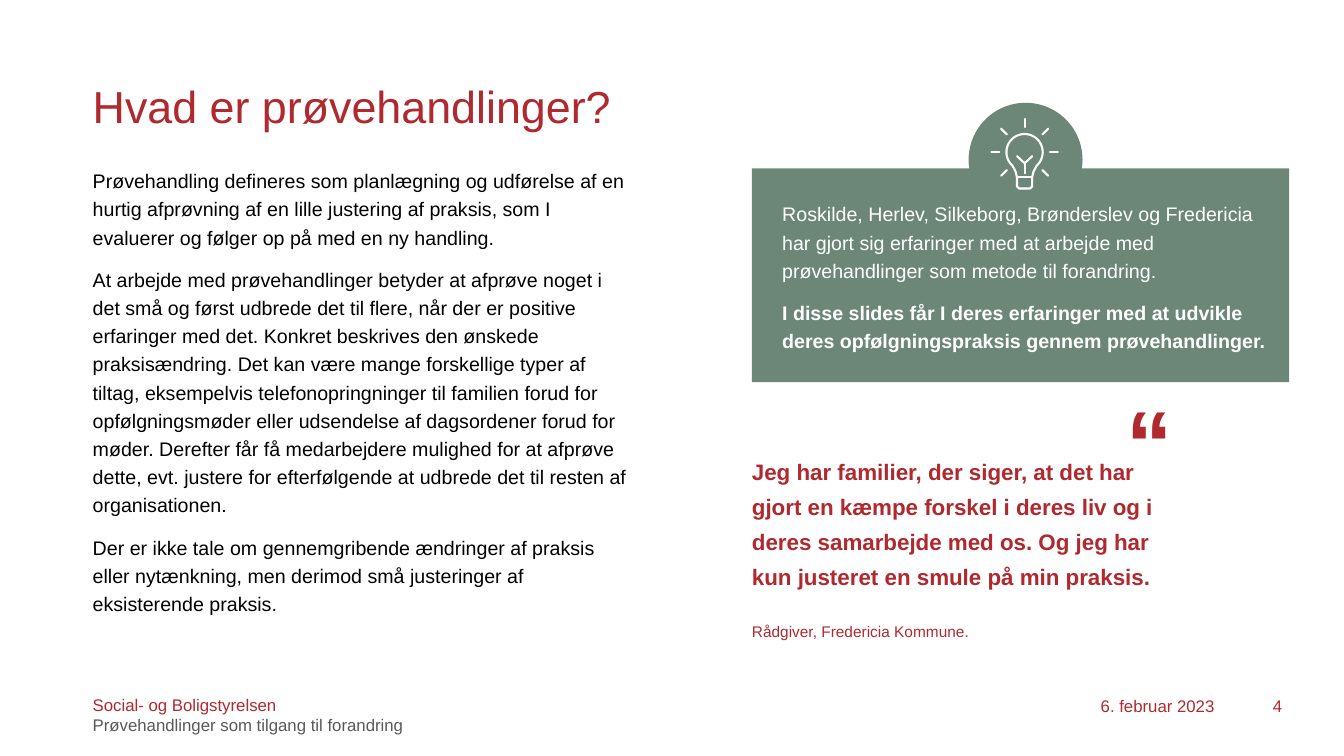
import math

from lxml import etree
from pptx import Presentation
from pptx import util as u
from pptx.dml.color import RGBColor
from pptx.enum import shapes, text
from pptx.oxml.ns import qn

FONT = "Arial"
RED, GREEN, WHITE, BLACK, GREY = "AF292E", "6C8777", "FFFFFF", "000000", "595959"

LEFT = 0.92
RIGHT_COLUMN = 7.46
BULB_X, BULB_Y, BULB_RADIUS = 10.165, 1.51, 0.18
NECK = 0.075
COLLAR_Y, BASE_Y = 1.76, 1.87

DEFINITION = (
    "Prøvehandling defineres som planlægning og udførelse af en hurtig afprøvning af en "
    "lille justering af praksis, som I evaluerer og følger op på med en ny handling.",
    "At arbejde med prøvehandlinger betyder at afprøve noget i det små og først udbrede det "
    "til flere, når der er positive erfaringer med det. Konkret beskrives den ønskede "
    "praksisændring. Det kan være mange forskellige typer af tiltag, eksempelvis "
    "telefonopringninger til familien forud for opfølgningsmøder eller udsendelse af "
    "dagsordener forud for møder. Derefter får få medarbejdere mulighed for at afprøve dette, "
    "evt. justere for efterfølgende at udbrede det til resten af organisationen.",
    "Der er ikke tale om gennemgribende ændringer af praksis eller nytænkning, men derimod "
    "små justeringer af eksisterende praksis.",
)
EXPERIENCE = (
    "Roskilde, Herlev, Silkeborg, Brønderslev og Fredericia har gjort sig erfaringer med at "
    "arbejde med prøvehandlinger som metode til forandring."
)
PURPOSE = (
    "I disse slides får I deres erfaringer med at udvikle deres opfølgningspraksis gennem "
    "prøvehandlinger."
)
QUOTE = (
    "Jeg har familier, der siger, at det har gjort en kæmpe forskel i deres liv og i deres "
    "samarbejde med os. Og jeg har kun justeret en smule på min praksis."
)


def rgb(value):
    return RGBColor.from_string(value)


def set_all(target, values):
    for name, value in values.items():
        setattr(target, name, value)


def add_text(slide, box, paragraphs, insets=(0, 0, 0, 0), anchor=text.MSO_ANCHOR.TOP):
    """Each paragraph is (words, size, colour, bold, paragraph format)."""
    frame = slide.shapes.add_textbox(*map(u.Inches, box)).text_frame
    sides = ("margin_left", "margin_top", "margin_right", "margin_bottom")
    set_all(frame, dict(zip(sides, map(u.Inches, insets))))
    set_all(frame, {"word_wrap": True, "vertical_anchor": anchor})
    for index, (words, size, colour, bold, layout) in enumerate(paragraphs):
        paragraph = frame.add_paragraph() if index else frame.paragraphs[0]
        set_all(paragraph, layout)
        run = paragraph.add_run()
        run.text = words
        set_all(run.font, {"name": FONT, "size": u.Pt(size), "bold": bold})
        run.font.color.rgb = rgb(colour)


def add_filled(slide, kind, box):
    shape = slide.shapes.add_shape(kind, *map(u.Inches, box))
    shape.shadow.inherit = False
    shape.fill.solid()
    shape.fill.fore_color.rgb = rgb(GREEN)
    shape.line.fill.background()


def draw_stroke(shape):
    shape.line.color.rgb = rgb(WHITE)
    shape.line.width = u.Pt(1.5)
    properties = shape._element.spPr
    properties.find(qn("a:ln")).set("cap", "rnd")
    if properties.find(qn("a:effectLst")) is None:
        etree.SubElement(properties, qn("a:effectLst"))


def add_line(group, start, end):
    ends = map(u.Inches, (*start, *end))
    draw_stroke(group.shapes.add_connector(shapes.MSO_CONNECTOR.STRAIGHT, *ends))


def add_outline(group, points, close):
    start, *others = [(u.Inches(x), u.Inches(y)) for x, y in points]
    builder = group.shapes.build_freeform(*start)
    builder.add_line_segments(others, close=close)
    shape = builder.convert_to_shape()
    shape.shadow.inherit = False
    shape.fill.background()
    draw_stroke(shape)


def around_bulb(radius, degrees):
    angle = math.radians(degrees)
    return BULB_X + radius * math.cos(angle), BULB_Y + radius * math.sin(angle)


def add_bulb(slide):
    group = slide.shapes.add_group_shape()
    for degrees in range(135, 406, 45):
        add_line(group, around_bulb(0.25, degrees), around_bulb(0.33, degrees))

    glass = [around_bulb(BULB_RADIUS, degrees) for degrees in range(132, 409, 6)]
    right_neck = [(0.09, 1.7), (NECK, COLLAR_Y), (NECK, BASE_Y - 0.02), (NECK - 0.02, BASE_Y)]
    right = [(BULB_X + offset, y) for offset, y in right_neck]
    left = [(BULB_X - offset, y) for offset, y in reversed(right_neck)]
    add_outline(group, glass + right + left, close=True)

    add_line(group, (BULB_X - NECK, COLLAR_Y), (BULB_X + NECK, COLLAR_Y))
    fork = (BULB_X, 1.62)
    add_outline(group, [(BULB_X - NECK, 1.55), fork, (BULB_X + NECK, 1.55)], close=False)
    add_line(group, fork, (BULB_X, 1.72))


def main():
    presentation = Presentation()
    presentation.slide_width = u.Inches(40) // 3
    presentation.slide_height = u.Inches(7.5)
    slide = presentation.slides.add_slide(presentation.slide_layouts[6])

    body = {"line_spacing": 1.2, "space_before": u.Pt(10)}
    heading = {"line_spacing": 0.9, "space_before": u.Pt(10)}
    quote = {"line_spacing": 1.3}
    source = {"line_spacing": 1.3, "space_before": u.Pt(18.5)}
    right = {"alignment": text.PP_ALIGN.RIGHT}

    add_text(slide, (LEFT, 0.84, 5.85, 0.93),
             [("Hvad er prøvehandlinger?", 32, RED, False, heading)])
    add_text(slide, (LEFT, 1.63, 5.34, 4.69),
             [(words, 14, BLACK, False, body) for words in DEFINITION])

    add_filled(slide, shapes.MSO_SHAPE.RECTANGLE, (RIGHT_COLUMN, 1.67, 5.33, 2.12))
    add_filled(slide, shapes.MSO_SHAPE.OVAL, (9.61, 1.02, 1.13, 1.13))
    add_bulb(slide)
    add_text(slide, (7.76, 1.96, 4.82, 1.95),
             [(EXPERIENCE, 14, WHITE, False, body), (PURPOSE, 14, WHITE, True, body)])

    add_text(slide, (11.18, 3.81, 0.81, 1.11), [("“", 66, RED, True, {})])
    add_text(slide, (RIGHT_COLUMN, 4.47, 4.13, 1.97),
             [(QUOTE, 16, RED, True, quote),
              ("Rådgiver, Fredericia Kommune.", 11, RED, False, source)])

    add_text(slide, (LEFT, 6.89, 4.36, 0.6),
             [("Social- og Boligstyrelsen", 12, RED, False, {}),
              ("Prøvehandlinger som tilgang til forandring", 12, GREY, False, {})])
    for box, words in (((10.12, 6.9, 1.93, 0.4), "6. februar 2023"),
                       ((12.04, 6.9, 0.68, 0.4), "4")):
        add_text(slide, box, [(words, 12, RED, False, right)], insets=(0.1, 0, 0, 0.05))

    presentation.save("out.pptx")


if __name__ == "__main__":
    main()
